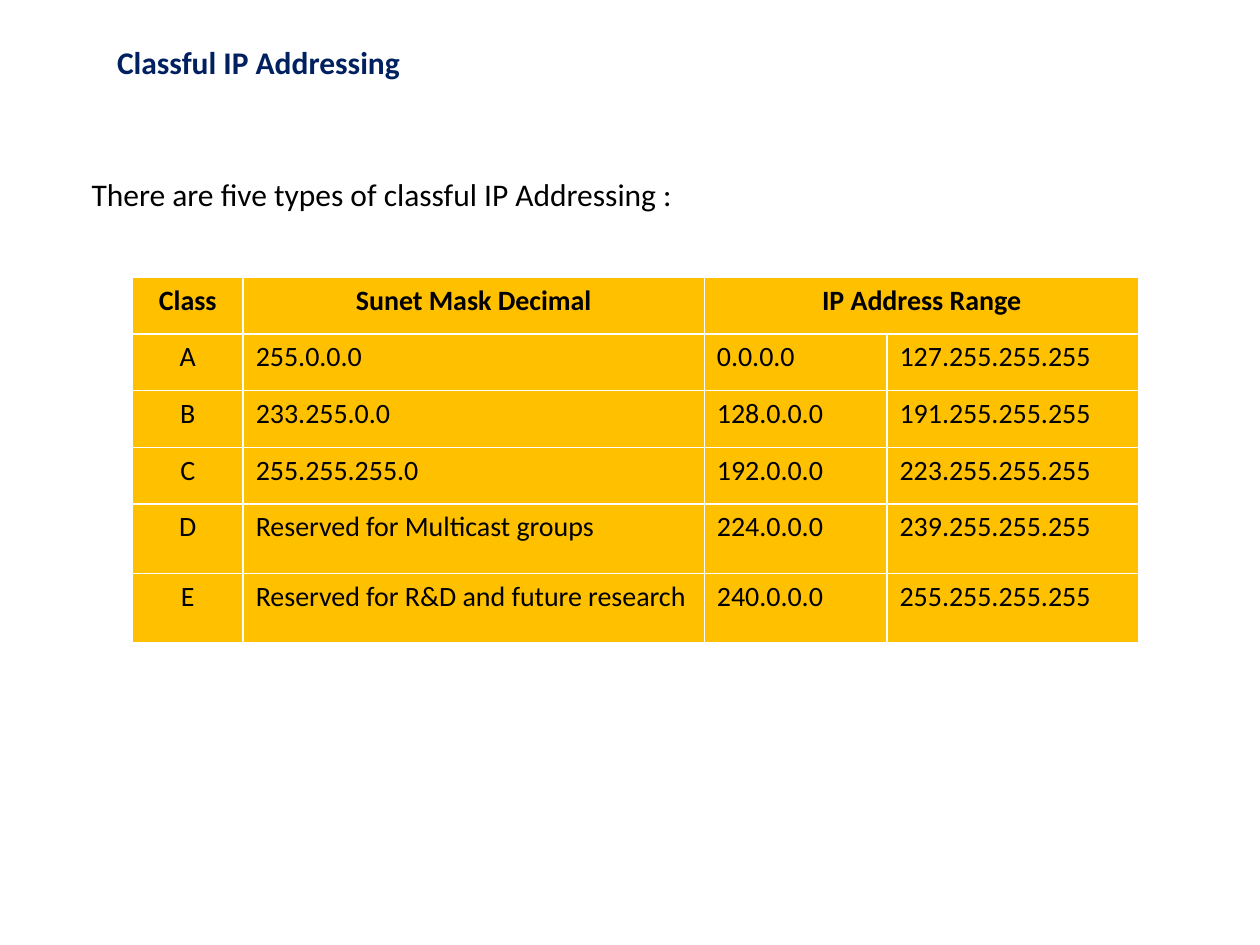
import pptx
import pptx.util
import pptx.dml.color
import pptx.enum.text

Pt = pptx.util.Pt
RGB = pptx.dml.color.RGBColor
ALIGN = pptx.enum.text.PP_ALIGN
NAVY = RGB(0x00, 0x20, 0x60)
BLACK = RGB(0x00, 0x00, 0x00)
AMBER = RGB(0xFF, 0xC0, 0x00)

HEAD = ["Class", "Sunet Mask Decimal", "IP Address Range", ""]
ROWS = [
    ["A", "255.0.0.0", "0.0.0.0", "127.255.255.255"],
    ["B", "233.255.0.0", "128.0.0.0", "191.255.255.255"],
    ["C", "255.255.255.0", "192.0.0.0", "223.255.255.255"],
    ["D", "Reserved for Multicast groups", "224.0.0.0", "239.255.255.255"],
    ["E", "Reserved for R&D and future research", "240.0.0.0", "255.255.255.255"],
]
WIDTHS = [63.4, 263.5, 104.4, 144]
HEIGHTS = [32.4] * 4 + [39.6] * 2


class Page:
    font = "Calibri"

    def __init__(self, slide):
        self.slide = slide

    def style(self, frame, size, color, bold=False, align=ALIGN.LEFT):
        for para in frame.paragraphs:
            para.alignment = align
            for run in para.runs:
                run.font.name = self.font
                run.font.size = Pt(size)
                run.font.bold = bold
                run.font.color.rgb = color

    def text(self, words, left, top, width, color, bold=False):
        box = self.slide.shapes.add_textbox(Pt(left), Pt(top), Pt(width), Pt(29))
        frame = box.text_frame
        frame.word_wrap = False
        frame.auto_size = pptx.enum.text.MSO_AUTO_SIZE.SHAPE_TO_FIT_TEXT
        frame.text = words
        self.style(frame, 18, color, bold)

    def table(self, data, left, top, widths, heights):
        # The default table style supplies the white rules
        grid = self.slide.shapes.add_table(
            len(data), len(widths), Pt(left), Pt(top),
            Pt(sum(widths)), Pt(sum(heights))).table
        grid.horz_banding = False
        for col, width in zip(grid.columns, widths):
            col.width = Pt(width)
        for row, height in zip(grid.rows, heights):
            row.height = Pt(height)
        for r, line in enumerate(data):
            for c, words in enumerate(line):
                cell = grid.cell(r, c)
                cell.fill.solid()
                cell.fill.fore_color.rgb = AMBER
                cell.text_frame.text = words
                mid = r == 0 or c == 0
                self.style(cell.text_frame, 16, BLACK, r == 0,
                           ALIGN.CENTER if mid else ALIGN.LEFT)
        return grid


def main():
    deck = pptx.Presentation()
    deck.slide_width, deck.slide_height = Pt(720), Pt(540)
    page = Page(deck.slides.add_slide(deck.slide_layouts[6]))

    # Title
    page.text("Classful IP Addressing", 59.8, 20.9, 177, NAVY, True)

    # Address classes, with one heading over both range columns
    grid = page.table([HEAD] + ROWS, 75.6, 158.4, WIDTHS, HEIGHTS)
    grid.cell(0, 2).merge(grid.cell(0, 3))

    # Lead-in
    page.text("There are five types of classful IP Addressing :",
              45.2, 96.5, 359.3, BLACK)

    deck.save("out.pptx")


if __name__ == "__main__":
    main()
